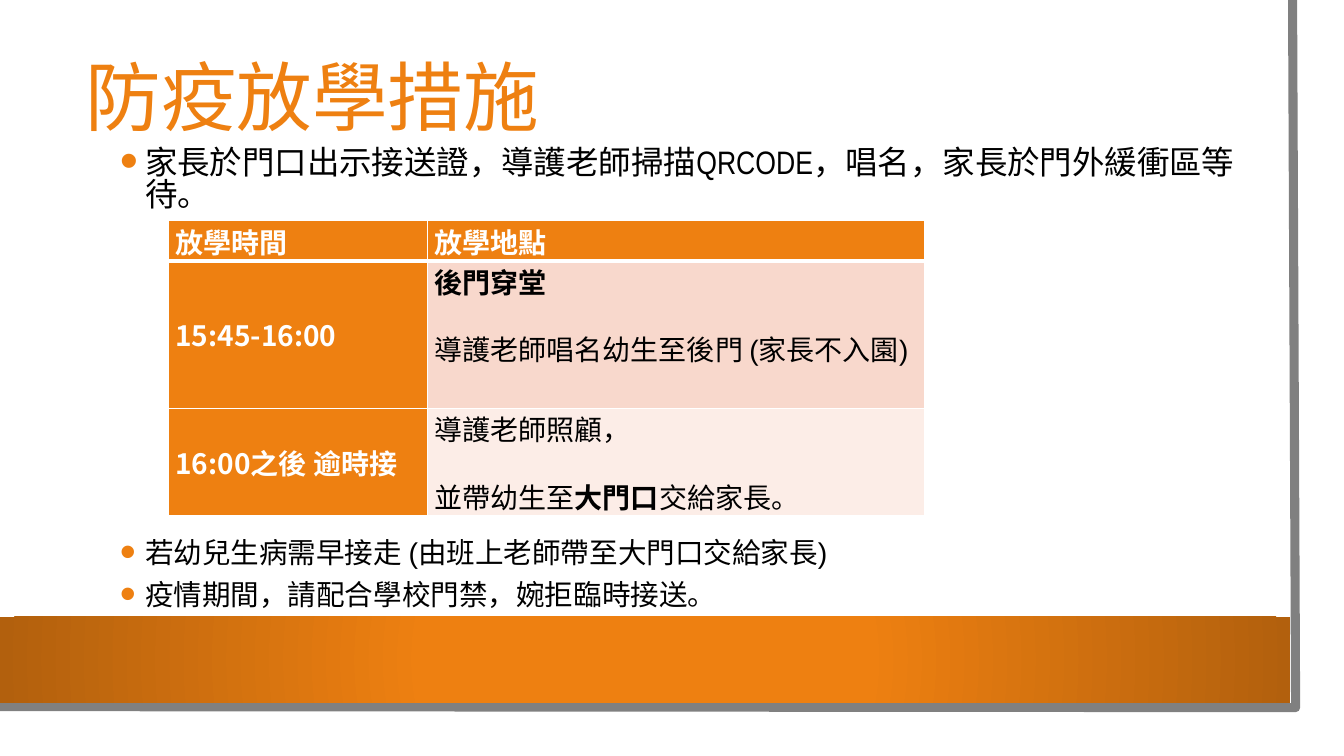
from lxml.etree import SubElement as Sub
from pptx import Presentation
from pptx.dml.color import RGBColor
from pptx.enum.shapes import MSO_SHAPE as Shape
from pptx.enum.text import MSO_ANCHOR as Anchor
from pptx.oxml import parse_xml
from pptx.oxml.ns import nsdecls, qn
from pptx.util import Inches, Pt

ORANGE = RGBColor(0xEE, 0x80, 0x11)
BROWN = RGBColor(0xB2, 0x60, 0x0D)
GRAY = RGBColor(0x80, 0x80, 0x80)
WHITE = RGBColor(0xFF, 0xFF, 0xFF)
BLACK = RGBColor(0, 0, 0)
PINK = RGBColor(0xF8, 0xD8, 0xCC)
PALE = RGBColor(0xFC, 0xED, 0xE7)
NARROW, ARIAL, NOTO = "Arial Narrow", "Arial", "Noto Sans CJK SC"

HEADS = ["放學時間", "放學地點"]
ROWS = [
    ("15:45-16:00", PINK, [
        [("後門穿堂", NARROW, True)],
        [("導護老師唱名幼生至後門 ", NARROW, False), ("(", ARIAL, False),
         ("家長不入園", NARROW, False), (")", ARIAL, False)],
    ]),
    ("16:00之後 逾時接", PALE, [
        [("導護老師照顧，", NARROW, False)],
        [("並帶幼生至", NARROW, False), ("大門口", NARROW, True),
         ("交給家長。", NARROW, False)],
    ]),
]
ENTRY = [[("家長於門口出示接送證，導護老師掃描QRCODE，唱名，家長於門外緩衝區等待。",
           NARROW, False)]]
NOTES = [
    [("若幼兒生病需早接走 ", NARROW, False), ("(", ARIAL, False),
     ("由班上老師帶至大門口交給家長", NARROW, False), (")", ARIAL, False)],
    [("疫情期間，請配合學校門禁，婉拒臨時接送。", NARROW, False)],
]


def write(para, runs, size, color):
    for text, face, bold in runs:
        run = para.add_run()
        run.text = text
        font = run.font
        font.name, font.size, font.bold = face, Pt(size), bold
        font.color.rgb = color


def add_lines(frame, lines, size, color, gap):
    for i, runs in enumerate(lines):
        para = frame.add_paragraph() if i else frame.paragraphs[0]
        if i:
            para.space_before = Pt(gap)
        write(para, runs, size, color)


def add_box(slide, left, top, width, height):
    box = slide.shapes.add_textbox(
        Inches(left), Inches(top), Inches(width), Inches(height))
    box.text_frame.word_wrap = True
    return box.text_frame


def add_title(slide, text):
    frame = add_box(slide, 0.75, 0.37, 11.37, 1.26)
    frame.vertical_anchor = Anchor.MIDDLE
    para = frame.paragraphs[0]
    para.line_spacing = 0.9
    write(para, [(text, NARROW, False)], 54, ORANGE)


def add_list(slide, top, height, lines, size):
    frame = add_box(slide, 1.09, top, 11.3, height)
    frame.margin_top = frame.margin_bottom = 0
    add_lines(frame, lines, size, BLACK, 10)
    for para in frame.paragraphs:
        para.line_spacing = 0.83
        props = para._p.get_or_add_pPr()
        props.set("marL", str(Inches(0.25)))
        props.set("indent", str(-Inches(0.25)))
        tint = Sub(props, qn("a:buClr"))
        Sub(tint, qn("a:srgbClr"), val=str(ORANGE))
        Sub(props, qn("a:buSzPct"), val="160000")
        Sub(props, qn("a:buFont"), typeface=ARIAL)
        Sub(props, qn("a:buChar"), char="•")


def add_edge(slide):
    form = slide.shapes.build_freeform(Inches(12.82), 0)
    form.add_line_segments(
        [(Inches(12.85), Inches(7.02)), (Inches(-0.03), Inches(7.01))], close=False)
    edge = form.convert_to_shape()
    edge.shadow.inherit = False
    edge.fill.background()
    edge.line.color.rgb = GRAY
    edge.line.width = Pt(6.5)


def add_bar(slide):
    bar = slide.shapes.add_shape(
        Shape.RECTANGLE, 0, Inches(6.12), Inches(12.8), Inches(0.85))
    bar.shadow.inherit = False
    bar.line.fill.background()
    grad = parse_xml(
        f'<a:gradFill {nsdecls("a")} rotWithShape="1"><a:gsLst>'
        f'<a:gs pos="34000"><a:srgbClr val="{ORANGE}"/></a:gs>'
        f'<a:gs pos="100000"><a:srgbClr val="{BROWN}"/></a:gs></a:gsLst>'
        '<a:path path="circle"><a:fillToRect l="50000" t="50000" r="50000" b="50000"/>'
        '</a:path></a:gradFill>')
    bar._element.spPr.find(qn("a:prstGeom")).addnext(grad)


def fill_cell(cell, lines, fill, color, low=1):
    cell.margin_left = cell.margin_right = Inches(0.07)
    cell.margin_top = cell.margin_bottom = 0
    props = cell._tc.get_or_add_tcPr()
    for side, width in zip("LRTB", (1, 1, 1, low)):
        line = Sub(props, qn(f"a:ln{side}"), w=str(Pt(width)))
        paint = Sub(line, qn("a:solidFill"))
        Sub(paint, qn("a:srgbClr"), val=str(WHITE))
    cell.fill.solid()
    cell.fill.fore_color.rgb = fill
    add_lines(cell.text_frame, lines, 20, color, 19)


def add_times(slide):
    table = slide.shapes.add_table(
        3, 2, Inches(1.67), Inches(2.19), Inches(7.5), Inches(2.93)).table
    for col, width in zip(table.columns, (2.57, 4.93)):
        col.width = Inches(width)
    for row, height in zip(table.rows, (0.4, 1.46, 1.07)):
        row.height = Inches(height)
    for c, head in enumerate(HEADS):
        fill_cell(table.cell(0, c), [[(head, NARROW, True)]], ORANGE, WHITE, 3)
    for r, (time, fill, place) in enumerate(ROWS, 1):
        cell = table.cell(r, 0)
        fill_cell(cell, [[(time, NOTO, True)]], ORANGE, WHITE)
        cell.vertical_anchor = Anchor.MIDDLE
        fill_cell(table.cell(r, 1), place, fill, BLACK)


def main():
    prs = Presentation()
    prs.slide_width, prs.slide_height = Inches(13.33), Inches(7.5)
    slide = prs.slides.add_slide(prs.slide_layouts[6])
    add_edge(slide)
    add_bar(slide)
    add_title(slide, "防疫放學措施")
    add_list(slide, 1.47, 0.8, ENTRY, 23.2)
    add_list(slide, 5.36, 0.85, NOTES, 20.4)
    add_times(slide)
    prs.save("out.pptx")


if __name__ == "__main__":
    main()
